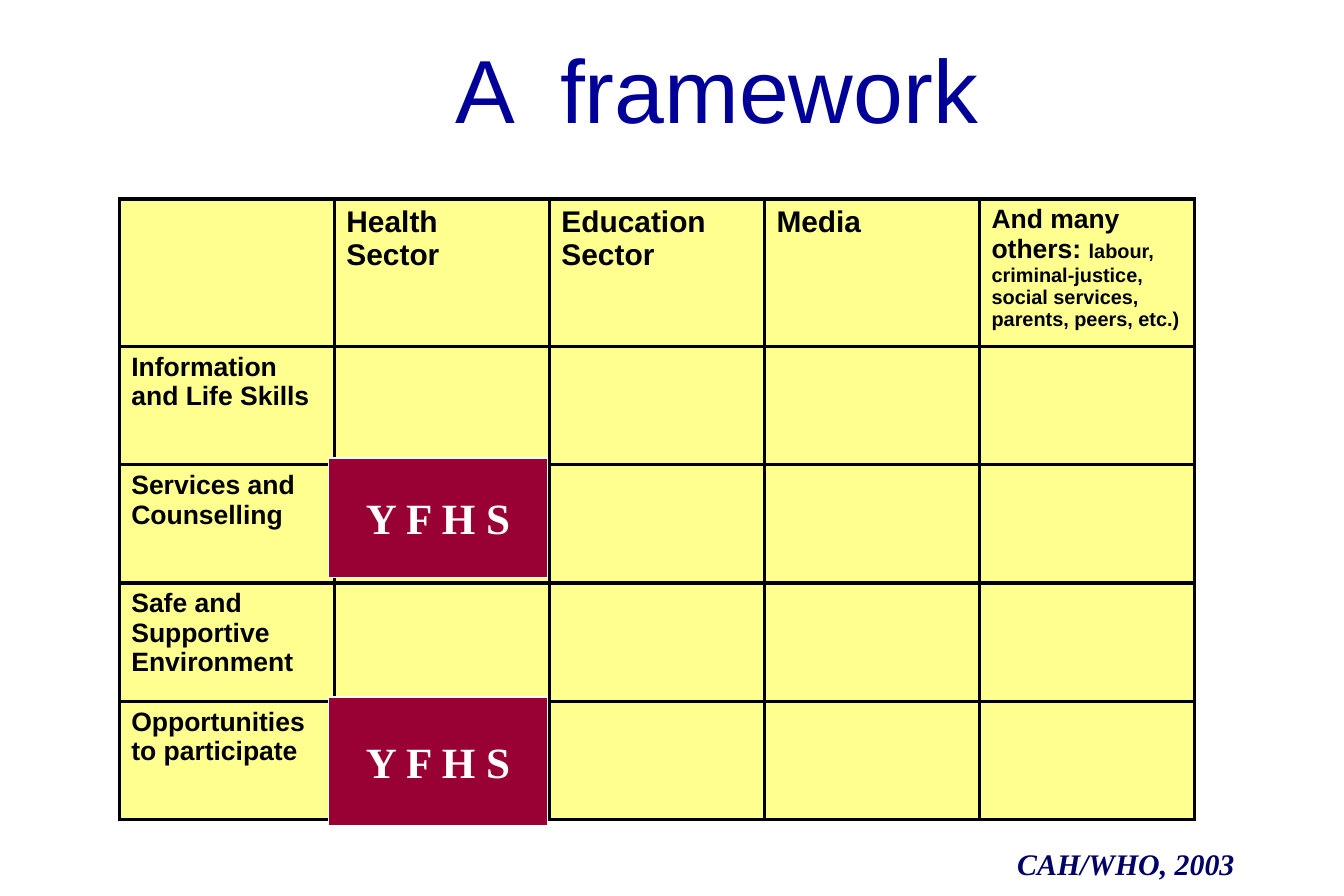
from dataclasses import dataclass

from lxml import etree
from pptx import Presentation
from pptx.dml.color import RGBColor
from pptx.enum.shapes import MSO_SHAPE
from pptx.enum.text import MSO_ANCHOR, MSO_AUTO_SIZE, PP_ALIGN
from pptx.oxml.ns import qn
from pptx.util import Pt

RECTANGLE = MSO_SHAPE.RECTANGLE
MIDDLE = MSO_ANCHOR.MIDDLE
CENTER = PP_ALIGN.CENTER
LEFT = PP_ALIGN.LEFT
GROW = MSO_AUTO_SIZE.SHAPE_TO_FIT_TEXT

TITLE_BLUE = RGBColor(0x00, 0x00, 0x99)
CREDIT_BLUE = RGBColor(0x00, 0x00, 0x66)
CELL_YELLOW = RGBColor(0xFF, 0xFF, 0x8F)
MARKER_RED = RGBColor(0x99, 0x00, 0x33)
WHITE = RGBColor(0xFF, 0xFF, 0xFF)
BLACK = RGBColor(0x00, 0x00, 0x00)

SANS, SERIF = "Arial", "Times New Roman"
COLUMN_WIDTH, HEADER_HEIGHT, ROW_HEIGHT = 129.6, 88.6, 71.3
BORDER_WIDTH = 2.25


@dataclass(frozen=True)
class Phrase:
    text: str
    size: float
    color: RGBColor = BLACK
    font: str = SANS
    bold: bool = True
    italic: bool = False


@dataclass(frozen=True)
class Marker:
    top: float
    height: float


SECTORS = [
    [],
    [Phrase("Health Sector", 18)],
    [Phrase("Education Sector", 18)],
    [Phrase("Media", 18)],
    [Phrase("And many others: ", 16),
     Phrase("labour, criminal-justice, social services, parents, peers, etc.)", 12)],
]
INTERVENTIONS = [
    "Information and Life Skills",
    "Services and Counselling",
    "Safe and Supportive Environment",
    "Opportunities to participate",
]
MARKERS = [Marker(276, 72), Marker(420, 77.8)]


def write(frame, phrases: list[Phrase], align=LEFT) -> None:
    paragraph = frame.paragraphs[0]
    paragraph.alignment = align
    for phrase in phrases:
        run = paragraph.add_run()
        run.text = phrase.text
        styles = {"name": phrase.font, "size": Pt(phrase.size),
                  "bold": phrase.bold, "italic": phrase.italic}
        for attribute, value in styles.items():
            setattr(run.font, attribute, value)
        run.font.color.rgb = phrase.color


def add_borders(cell) -> None:
    properties = cell._tc.get_or_add_tcPr()
    for index, side in enumerate(("a:lnL", "a:lnR", "a:lnT", "a:lnB")):
        line = etree.Element(qn(side), w=str(Pt(BORDER_WIDTH)))
        fill = etree.SubElement(line, qn("a:solidFill"))
        etree.SubElement(fill, qn("a:srgbClr"), val=str(BLACK))
        properties.insert(index, line)


def add_framework(slide) -> None:
    rows = [SECTORS] + [
        [[Phrase(name, 16)]] + [[] for _ in SECTORS[1:]] for name in INTERVENTIONS
    ]
    heights = [HEADER_HEIGHT] + [ROW_HEIGHT] * len(INTERVENTIONS)
    framework = slide.shapes.add_table(
        len(rows), len(SECTORS), Pt(72), Pt(120),
        Pt(COLUMN_WIDTH * len(SECTORS)), Pt(sum(heights))).table
    for column in framework.columns:
        column.width = Pt(COLUMN_WIDTH)
    for row, height, contents in zip(framework.rows, heights, rows):
        row.height = Pt(height)
        for cell, phrases in zip(row.cells, contents):
            cell.fill.solid()
            cell.fill.fore_color.rgb = CELL_YELLOW
            add_borders(cell)
            write(cell.text_frame, phrases)


def add_marker(slide, marker: Marker) -> None:
    box = slide.shapes.add_shape(
        RECTANGLE, Pt(198), Pt(marker.top), Pt(132), Pt(marker.height))
    box.shadow.inherit = False
    box.fill.solid()
    box.fill.fore_color.rgb = MARKER_RED
    box.line.color.rgb = WHITE
    box.line.width = Pt(1)
    box.text_frame.word_wrap = False
    box.text_frame.vertical_anchor = MIDDLE
    write(box.text_frame, [Phrase("Y F H S", 26, WHITE, SERIF)], CENTER)


def main() -> None:
    presentation = Presentation()
    presentation.slide_width, presentation.slide_height = Pt(810), Pt(540)
    slide = presentation.slides.add_slide(presentation.slide_layouts[6])

    title = slide.shapes.add_textbox(Pt(88), Pt(23.8), Pt(688.3), Pt(58.3)).text_frame
    title.word_wrap = True
    title.vertical_anchor = MIDDLE
    write(title, [Phrase("A  framework", 54, TITLE_BLUE, bold=False)], CENTER)

    credit = slide.shapes.add_textbox(Pt(606), Pt(506.2), Pt(163.4), Pt(28.8)).text_frame
    credit.word_wrap = False
    credit.auto_size = GROW
    write(credit, [Phrase("CAH/WHO, 2003", 18, CREDIT_BLUE, SERIF, italic=True)])

    add_framework(slide)
    for marker in MARKERS:
        add_marker(slide, marker)
    presentation.save("out.pptx")


if __name__ == "__main__":
    main()
